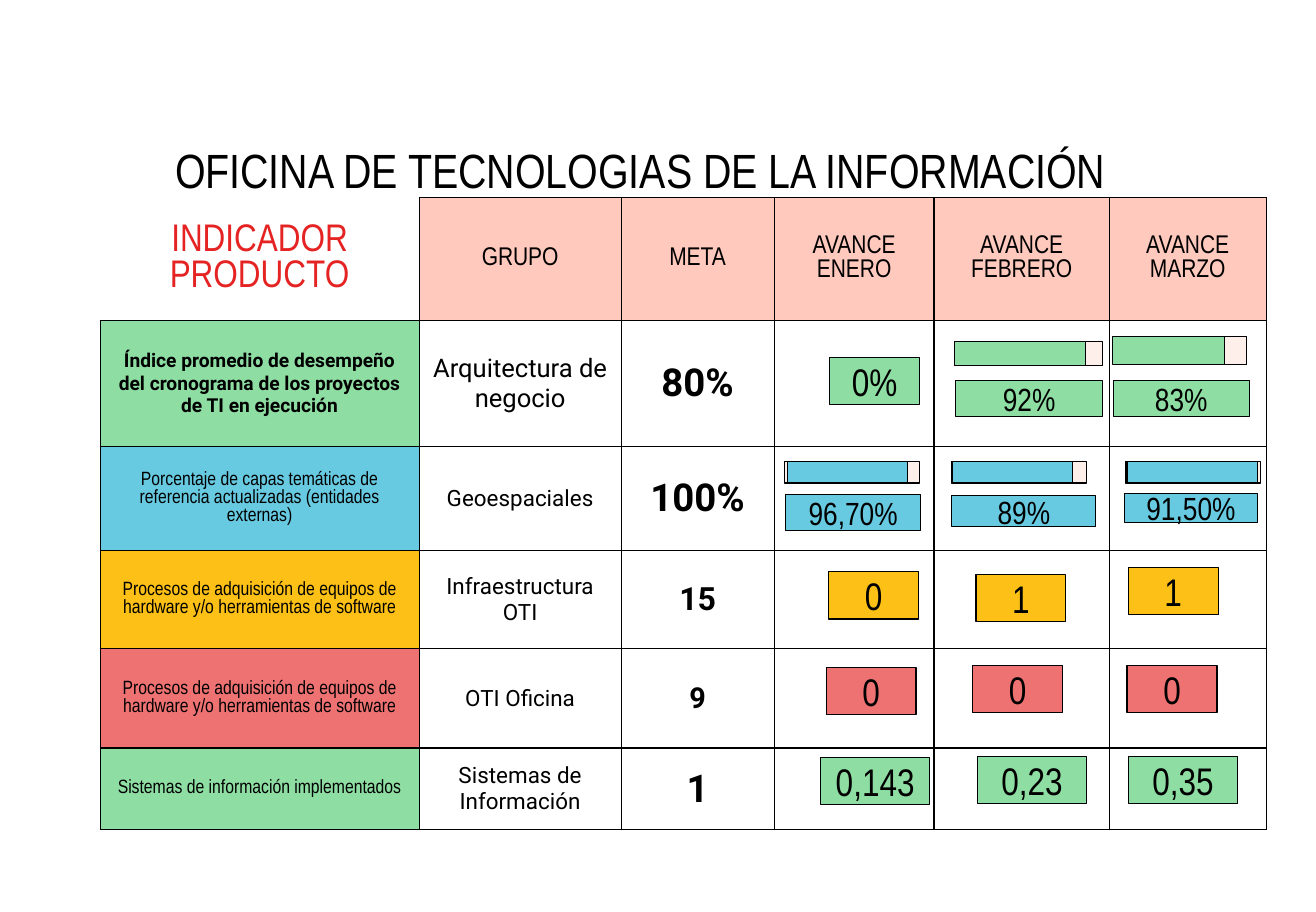
from lxml import etree
from pptx import Presentation
from pptx import util as u
from pptx.dml.color import RGBColor
from pptx.enum import shapes, text
from pptx.oxml import ns

BLACK = RGBColor(0x00, 0x00, 0x00)
WHITE = RGBColor(0xFF, 0xFF, 0xFF)
RED = RGBColor(0xE5, 0x23, 0x23)
PINK = RGBColor(0xFF, 0xC9, 0xBD)
TRACK = RGBColor(0xFE, 0xEF, 0xEA)
GREEN = RGBColor(0x8E, 0xDE, 0xA3)
BLUE = RGBColor(0x67, 0xCA, 0xE1)
YELLOW = RGBColor(0xFD, 0xC0, 0x17)
CORAL = RGBColor(0xEE, 0x72, 0x72)

NARROW, ROBOTO = "Arial Narrow", "Roboto"
INSETS = {f"margin_{side}": u.Pt(7.2) for side in ("left", "right", "top", "bottom")}
FRAME = {**INSETS, "vertical_anchor": text.MSO_ANCHOR.MIDDLE}

COLUMN_WIDTHS = [199.4, 126.2, 95.6, 100, 109.4, 98.1]
ROW_HEIGHTS = [76.9, 78.4, 65.3, 61.3, 61.9, 51.2]
HEADINGS = ["INDICADOR\nPRODUCTO", "GRUPO", "META", "AVANCE ENERO", "AVANCE FEBRERO", "AVANCE MARZO"]
ADQUISICION = "Procesos de adquisición de equipos de hardware y/o herramientas de software"
INDICATORS = [
    (GREEN, "Índice promedio de desempeño del cronograma de los proyectos de TI en ejecución",
     "Arquitectura de negocio", 16, "80%", 24),
    (BLUE, "Porcentaje de capas temáticas de referencia actualizadas (entidades externas)",
     "Geoespaciales", 14, "100%", 24),
    (YELLOW, ADQUISICION, "Infraestructura OTI", 14, "15", 20),
    (CORAL, ADQUISICION, "OTI Oficina", 14, "9", 18),
    (GREEN, "Sistemas de información implementados", "Sistemas de Información", 14, "1", 24),
]

COUNT, DECIMAL = (56.2, 29.5, 24), (68.4, 29.5, 24)
ADVANCES = [
    (GREEN, "0%", 518.4, 223.2, *COUNT),
    (GREEN, "92%", 596.9, 237.6, 92.2, 22.3, 20),
    (GREEN, "83%", 695.5, 237.6, 85, 22.3, 20),
    (BLUE, "96,70%", 491, 308.9, 84.2, 22.3, 20),
    (BLUE, "89%", 594.7, 309.6, 90, 19.4, 20),
    (BLUE, "91,50%", 702.7, 308.2, 82.8, 18, 20),
    (YELLOW, "0", 517.7, 357.1, *COUNT),
    (YELLOW, "1", 609.8, 358.6, *COUNT),
    (YELLOW, "1", 704.9, 354.2, *COUNT),
    (CORAL, "0", 516.2, 416.9, *COUNT),
    (CORAL, "0", 607.7, 415.4, *COUNT),
    (CORAL, "0", 704.2, 415.4, *COUNT),
    (GREEN, "0,143", 512.6, 473, *DECIMAL),
    (GREEN, "0,23", 610.6, 472.3, *DECIMAL),
    (GREEN, "0,35", 704.9, 472.3, *DECIMAL),
]
PROGRESS = [
    (GREEN, 213.4, 14.8, (596.2, 92.9), (596.2, 82.1)),
    (GREEN, 210.4, 17.3, (697, 82.1), (695.2, 69.8)),
    (BLUE, 288, 13.7, (490.3, 84.2), (492.1, 74.9)),
    (BLUE, 288, 13.7, (594.7, 84.2), (595.1, 74.9)),
    (BLUE, 288, 13.7, (703.4, 84.2), (704.2, 81.4)),
]


def apply(target, values):
    for name, value in values.items():
        setattr(target, name, value)


def write(frame, words, size, face=NARROW, color=BLACK, bold=False):
    frame.text = words
    for paragraph in frame.paragraphs:
        paragraph.alignment = text.PP_ALIGN.CENTER
        apply(paragraph.font, {"size": u.Pt(size), "name": face, "bold": bold})
        paragraph.font.color.rgb = color


def add_border(cell, side, width):
    line = etree.SubElement(cell._tc.get_or_add_tcPr(), ns.qn(f"a:ln{side}"), w=str(u.Pt(width)))
    fill = etree.SubElement(line, ns.qn("a:solidFill"))
    etree.SubElement(fill, ns.qn("a:srgbClr"), val=str(BLACK))


def format_cell(cell, row, column):
    apply(cell, FRAME)
    thick = {"L": column in (4, 5) and (row or column == 4),
             "R": column in (3, 4) and (row or column == 3)}
    corner = row == column == 0
    for side in "RB" if corner else "LRTB":
        add_border(cell, side, 1 if thick.get(side) else 0.75)
    if corner:
        cell.fill.background()
    else:
        cell.fill.solid()
        cell.fill.fore_color.rgb = WHITE if row else PINK


def add_indicators(slide):
    table = slide.shapes.add_table(
        len(ROW_HEIGHTS), len(COLUMN_WIDTHS), u.Pt(62.5), u.Pt(123.4),
        u.Pt(sum(COLUMN_WIDTHS)), u.Pt(sum(ROW_HEIGHTS))).table
    apply(table, {"first_row": False, "horz_banding": False})
    for column, width in zip(table.columns, COLUMN_WIDTHS):
        column.width = u.Pt(width)
    for r, height in enumerate(ROW_HEIGHTS):
        table.rows[r].height = u.Pt(height)
        for c in range(len(COLUMN_WIDTHS)):
            format_cell(table.cell(r, c), r, c)
    for c, heading in enumerate(HEADINGS):
        size, color = (16, BLACK) if c else (24, RED)
        write(table.cell(0, c).text_frame, heading, size, color=color)
    for r, (color, indicator, group, group_size, goal, goal_size) in enumerate(INDICATORS, 1):
        name_cell, group_cell, goal_cell = (table.cell(r, c) for c in range(3))
        name_cell.fill.fore_color.rgb = color
        write(name_cell.text_frame, indicator, 12, ROBOTO if r == 1 else NARROW, bold=r == 1)
        write(group_cell.text_frame, group, group_size, ROBOTO)
        write(goal_cell.text_frame, goal, goal_size, ROBOTO, bold=True)


def add_box(slide, color, left, top, width, height):
    box = slide.shapes.add_shape(shapes.MSO_SHAPE.RECTANGLE, *map(u.Pt, (left, top, width, height)))
    box.shadow.inherit = False
    box.fill.solid()
    box.fill.fore_color.rgb = color
    box.line.color.rgb = BLACK
    box.line.width = u.Pt(0.75)
    return box


def add_advance(slide, color, value, left, top, width, height, size):
    frame = add_box(slide, color, left, top, width, height).text_frame
    apply(frame, {**FRAME, "word_wrap": True})
    write(frame, value, size)


def add_progress(slide, color, top, height, track, done):
    for fill, (left, width) in ((TRACK, track), (color, done)):
        add_box(slide, fill, left, top, width, height)


def add_title(slide):
    title = slide.shapes.title
    apply(title, {"left": u.Pt(76.3), "top": u.Pt(82.1), "width": u.Pt(648), "height": u.Pt(47.5)})
    apply(title.text_frame, {**FRAME, "word_wrap": True, "auto_size": text.MSO_AUTO_SIZE.NONE})
    write(title.text_frame, "OFICINA DE TECNOLOGIAS DE LA INFORMACIÓN", 30)


def main():
    deck = Presentation()
    apply(deck, {"slide_width": u.Pt(822.24), "slide_height": u.Pt(569.52)})
    slide = deck.slides.add_slide(deck.slide_layouts[5])
    add_title(slide)
    add_indicators(slide)
    for advance in ADVANCES:
        add_advance(slide, *advance)
    for progress in PROGRESS:
        add_progress(slide, *progress)
    deck.save("out.pptx")


if __name__ == "__main__":
    main()
